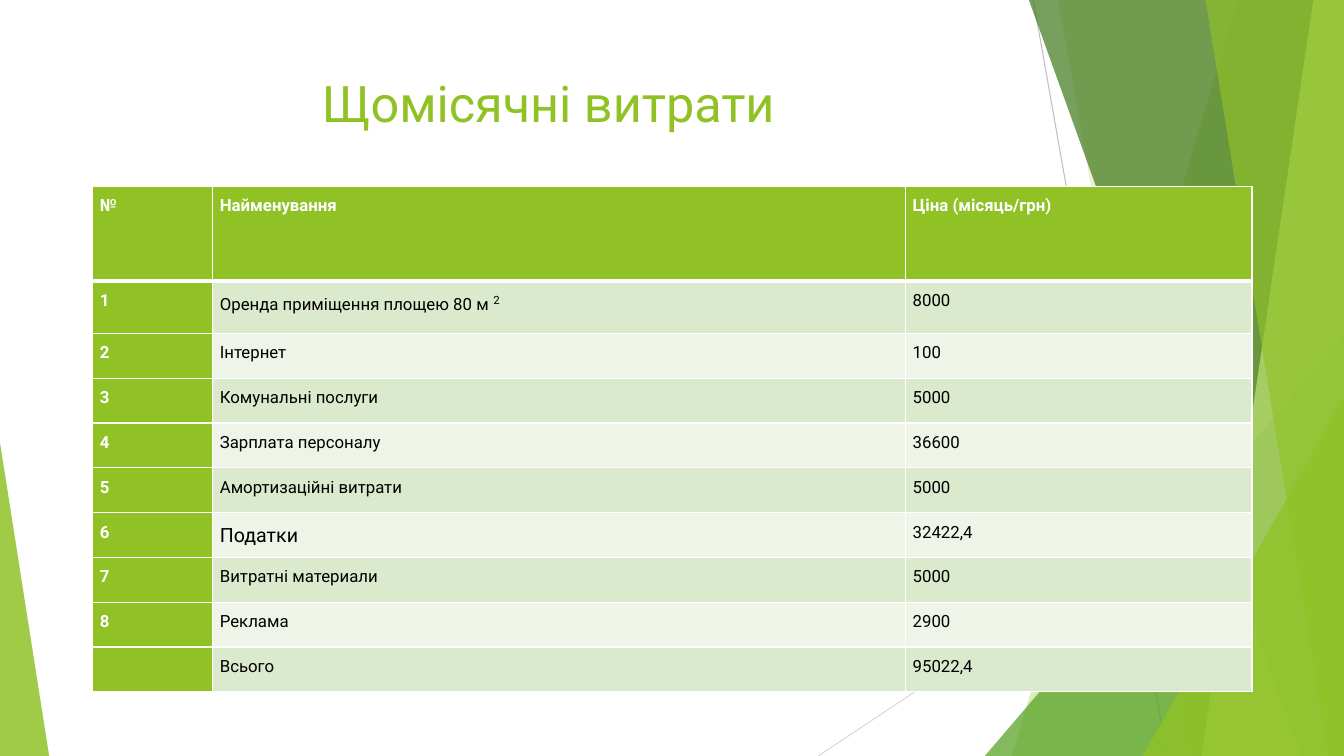
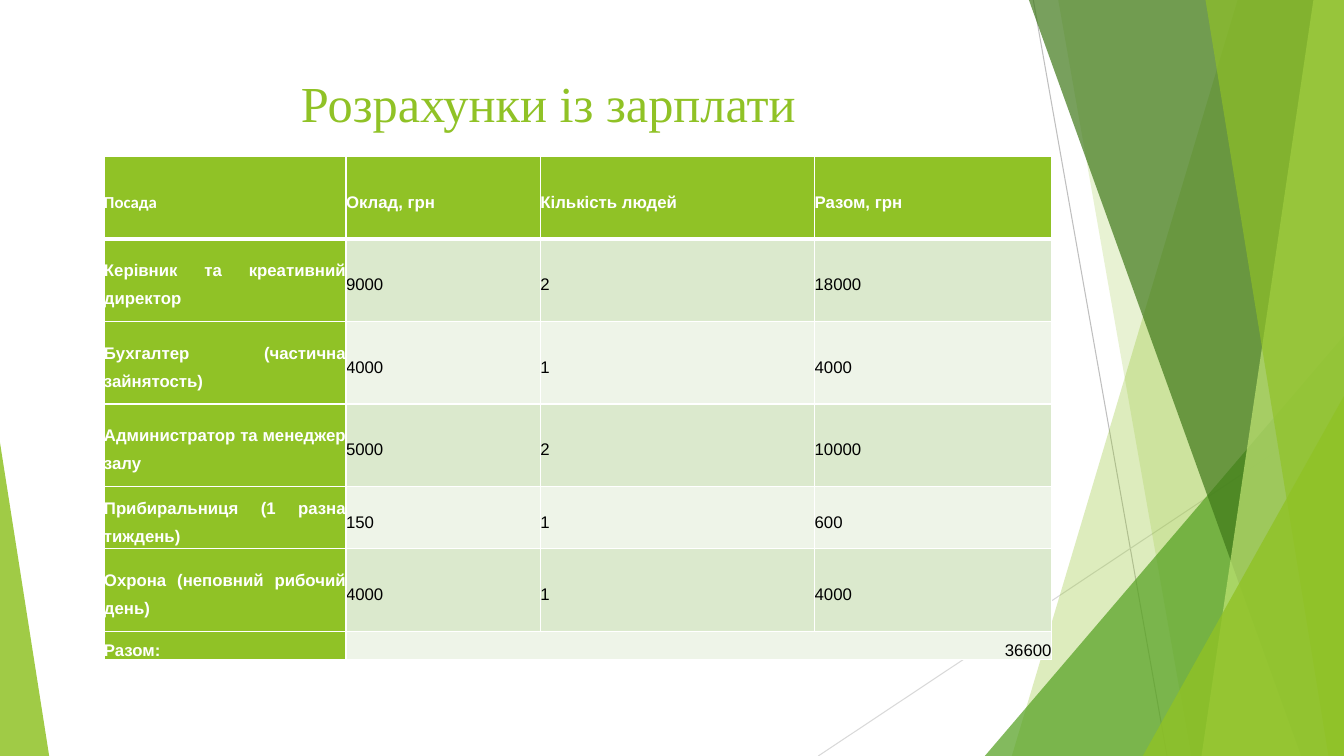
from lxml.etree import SubElement
from pptx import Presentation
from pptx.dml.color import RGBColor
from pptx.enum.shapes import MSO_CONNECTOR, MSO_SHAPE
from pptx.enum.text import MSO_ANCHOR, PP_ALIGN
from pptx.oxml.ns import qn
from pptx.util import Cm, Pt

GREEN, WHITE, BLACK = "90C226", "FFFFFF", "000000"
ROW_TINTS = ["EEF4E8", "DBE9CD"]
WIDTH, HEIGHT = 33.87, 19.05


def paint(fill, colour, opacity=100):
    fill.solid()
    fill.fore_color.rgb = RGBColor.from_string(colour)
    if opacity < 100:
        colour_element = fill._xPr.find(".//" + qn("a:srgbClr"))
        SubElement(colour_element, qn("a:alpha"), val=str(opacity * 1000))


def add_border(cell, side, points):
    """Draw one white edge; call it before the cell is filled."""
    line = SubElement(cell._tc.get_or_add_tcPr(), qn(f"a:ln{side}"), w=str(Pt(points)))
    SubElement(SubElement(line, qn("a:solidFill")), qn("a:srgbClr"), val=WHITE)


presentation = Presentation()
presentation.slide_width, presentation.slide_height = Cm(WIDTH), Cm(HEIGHT)
layout = presentation.slide_layouts[5]

# Background facets, drawn on the first slide and then moved to the layout
first_slide = presentation.slides.add_slide(layout)
facets = []
guide_lines = [(26.04, 0, 29.41, HEIGHT, "BFBFBF"), (WIDTH, 10.24, 20.62, HEIGHT, "D9D9D9")]
for x1, y1, x2, y2, colour in guide_lines:
    connector = first_slide.shapes.add_connector(
        MSO_CONNECTOR.STRAIGHT, Cm(x1), Cm(y1), Cm(x2), Cm(y2))
    connector.line.width = Pt(0.75)
    paint(connector.line.fill, colour)
    SubElement(connector._element.spPr, qn("a:effectLst"))
    facets.append(connector)

# A band has its left edge at the top and at the bottom of the slide;
# a triangle has left, top, width and the place of its apex
backdrop = [
    ("band", (31.19, 25.5), GREEN, 30),
    ("band", (26.67, 30.02), GREEN, 20),
    ("triangle", (24.82, 8.46, 9.05, 1), "54A021", 72),
    ("band", (25.93, 32.79), "3F7819", 70),
    ("band", (33.1, 30.28), "C0E474", 70),
    ("band", (30.38, 33.48), GREEN, 65),
    ("triangle", (28.8, 9.98, 5.07, 1), GREEN, 80),
    ("triangle", (0, 11.15, 1.24, 0), GREEN, 85),
]
for kind, geometry, colour, opacity in backdrop:
    if kind == "band":
        top_x, bottom_x = geometry
        builder = first_slide.shapes.build_freeform(Cm(top_x), 0)
        builder.add_line_segments([
            (Cm(WIDTH), 0), (Cm(WIDTH), Cm(HEIGHT)), (Cm(bottom_x), Cm(HEIGHT))])
        shape = builder.convert_to_shape()
    else:
        left, top, width, apex = geometry
        shape = first_slide.shapes.add_shape(
            MSO_SHAPE.ISOSCELES_TRIANGLE, Cm(left), Cm(top), Cm(width), Cm(HEIGHT - top))
        shape.adjustments[0] = apex
    shape.shadow.inherit = False
    shape.line.fill.background()
    paint(shape.fill, colour, opacity)
    facets.append(shape)
for position, facet in enumerate(facets, start=2):
    layout.shapes.element.insert(position, facet._element)

costs = {
    "title": "Щомісячні витрати", "title_font": "Roboto", "title_height": 3.66,
    "font": "Roboto", "left": 2.34, "top": 4.7, "margin": 0.18, "anchor": MSO_ANCHOR.TOP,
    "columns": [3.02, 17.46, 8.73],
    "heights": [2.38, 1.32] + [1.13] * 8,
    "rows": [
        ("№", "Найменування", "Ціна (місяць/грн)"),
        ("1", "Оренда приміщення площею 80 м ", "8000"),
        ("2", "Інтернет", "100"),
        ("3", "Комунальні послуги", "5000"),
        ("4", "Зарплата персоналу", "36600"),
        ("5", "Амортизаційні витрати", "5000"),
        ("6", "Податки", "32422,4"),
        ("7", "Витратні материали", "5000"),
        ("8", "Реклама", "2900"),
        ("", "Всього", "95022,4"),
    ],
}
salaries = {
    "title": "Розрахунки із зарплати", "title_font": "Times New Roman", "title_height": 2.24,
    "font": "Arial", "left": 2.62, "top": 3.94, "margin": 0, "anchor": MSO_ANCHOR.MIDDLE,
    "columns": [6.1, 4.9, 6.91, 5.97],
    "heights": [2.08] * 4 + [1.57, 2.08, 0.53],
    "rows": [
        ("Посада", "Оклад, грн", "Кількість людей", "Разом, грн"),
        ("Керівник та креативний директор", "9000", "2", "18000"),
        ("Бухгалтер (частична зайнятость)", "4000", "1", "4000"),
        ("Администратор та менеджер залу", "5000", "2", "10000"),
        ("Прибиральниця (1 разна тиждень)", "150", "1", "600"),
        ("Охрона (неповний рибочий день)", "4000", "1", "4000"),
        ("Разом:", "36600", "", ""),
    ],
}

tables = []
for content in (costs, salaries):
    slide = first_slide if content is costs else presentation.slides.add_slide(layout)
    title = slide.shapes.title
    title.left, title.top = Cm(1.88), Cm(1.7)
    title.width, title.height = Cm(23.88), Cm(content["title_height"])
    title.text_frame.text = content["title"]
    title.text_frame.vertical_anchor = MSO_ANCHOR.TOP
    paragraph = title.text_frame.paragraphs[0]
    paragraph.alignment = PP_ALIGN.CENTER
    font = paragraph.runs[0].font
    font.name, font.size = content["title_font"], Pt(36)
    paint(font.fill, GREEN)

    rows, columns, heights = content["rows"], content["columns"], content["heights"]
    table = slide.shapes.add_table(
        len(rows), len(columns), Cm(content["left"]), Cm(content["top"]),
        Cm(sum(columns)), Cm(sum(heights))).table
    tables.append(table)
    for column, width in zip(table.columns, columns):
        column.width = Cm(width)
    for row_index, texts in enumerate(rows):
        table.rows[row_index].height = Cm(heights[row_index])
        for column_index, text in enumerate(texts):
            cell = table.cell(row_index, column_index)
            is_header = row_index == 0 or column_index == 0
            add_border(cell, "L", 1)
            add_border(cell, "R", 1)
            add_border(cell, "T", 3 if row_index == 1 else 1)
            add_border(cell, "B", 3 if row_index == 0 else 1)
            paint(cell.fill, GREEN if is_header else ROW_TINTS[row_index % 2])
            cell.margin_left = cell.margin_right = Cm(content["margin"])
            cell.margin_top = cell.margin_bottom = 0
            cell.vertical_anchor = content["anchor"]
            cell.text_frame.text = text
            paragraph = cell.text_frame.paragraphs[0]
            paragraph.alignment = PP_ALIGN.JUSTIFY
            paragraph.line_spacing = 1.5
            for run in paragraph.runs:
                run.font.name, run.font.size = content["font"], Pt(12)
                run.font.bold = is_header
                paint(run.font.fill, WHITE if is_header else BLACK)
            if not text:
                SubElement(paragraph._p, qn("a:endParaRPr"), sz="1200")

# Cells that differ from the rest of their table
cost_table, salary_table = tables
square = cost_table.cell(1, 1).text_frame.paragraphs[0].add_run()
square.text = "2"
square.font.name, square.font.size, square.font.bold = "Roboto", Pt(14), False
paint(square.font.fill, BLACK)
square.font._element.set("baseline", "30000")
cost_table.cell(6, 1).text_frame.paragraphs[0].runs[0].font.size = Pt(14)

salary_table.cell(0, 0).text_frame.paragraphs[0].runs[0].font.name = "Calibri"
total = salary_table.cell(6, 1)
total.merge(salary_table.cell(6, 3))
total.text_frame.paragraphs[0].alignment = PP_ALIGN.RIGHT

presentation.save("out.pptx")
